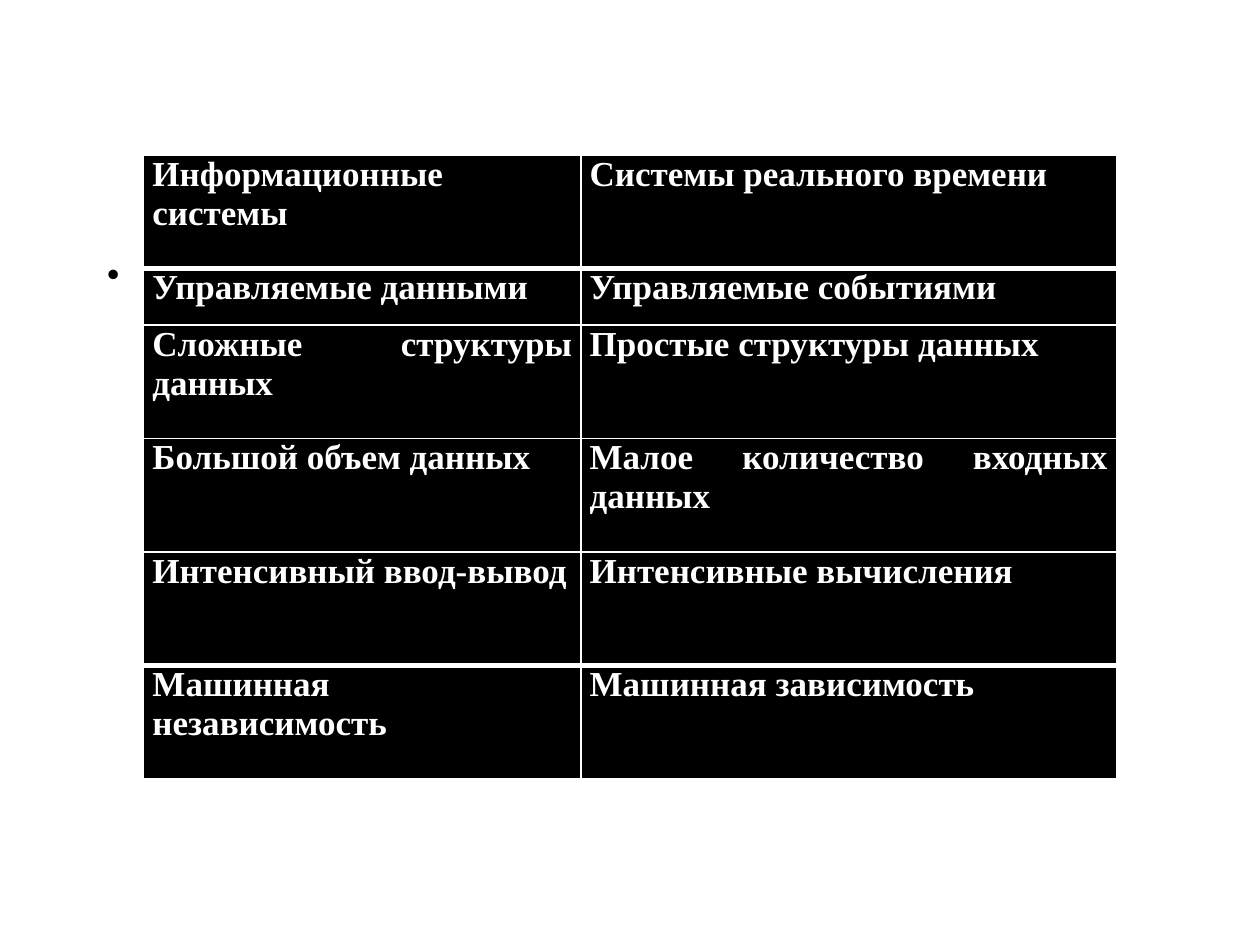
from lxml import etree
from pptx import Presentation
from pptx.dml.color import RGBColor
from pptx.enum import text
from pptx.oxml import ns
from pptx.util import Inches, Pt

BLACK = RGBColor(0, 0, 0)
WHITE = RGBColor(255, 255, 255)
FONT = "Times New Roman"

COLUMN_WIDTHS = (3.47, 4.25)
ROW_HEIGHTS = (0.9, 0.45, 0.9, 0.9, 0.9, 0.9)
ROWS = (
    ("Информационные системы", "Системы реального времени"),
    ("Управляемые данными", "Управляемые событиями"),
    ("Сложные структуры данных", "Простые структуры данных"),
    ("Большой объем данных", "Малое количество входных данных"),
    ("Интенсивный ввод-вывод", "Интенсивные вычисления"),
    ("Машинная независимость", "Машинная зависимость"),
)


def format_paragraph(p, color):
    p.alignment = text.PP_ALIGN.JUSTIFY
    p.font.name = FONT
    p.font.size = Pt(20)
    p.font.bold = True
    p.font.color.rgb = color


def add_borders(cell, top, bottom):
    """Draw white borders; top and bottom are widths in points."""
    tcPr = cell._tc.get_or_add_tcPr()
    for side, width in (("L", 1), ("R", 1), ("T", top), ("B", bottom)):
        ln = etree.SubElement(tcPr, ns.qn(f"a:ln{side}"), w=str(Pt(width)))
        fill = etree.SubElement(ln, ns.qn("a:solidFill"))
        etree.SubElement(fill, ns.qn("a:srgbClr"), val=str(WHITE))


def fill_cell(cell, label, top, bottom):
    cell.text = label
    cell.margin_left = cell.margin_right = Inches(0.07)
    cell.margin_top = cell.margin_bottom = 0
    format_paragraph(cell.text_frame.paragraphs[0], WHITE)
    add_borders(cell, top, bottom)
    cell.fill.solid()
    cell.fill.fore_color.rgb = BLACK


def add_comparison_table(s):
    table = s.shapes.add_table(
        len(ROWS), len(COLUMN_WIDTHS), Inches(1.14), Inches(1.23),
        Inches(sum(COLUMN_WIDTHS)), Inches(sum(ROW_HEIGHTS))).table
    for column, width in zip(table.columns, COLUMN_WIDTHS):
        column.width = Inches(width)
    for row, height in zip(table.rows, ROW_HEIGHTS):
        row.height = Inches(height)

    # Heavy rules lie below the first row and above the last one.
    last = len(ROWS) - 1
    rules = [3 if i in (1, last) else 1 for i in range(len(ROWS) + 1)]
    for i, labels in enumerate(ROWS):
        for j, label in enumerate(labels):
            fill_cell(table.cell(i, j), label, rules[i], rules[i + 1])


def set_subtitle(sp):
    sp.left, sp.top = Inches(0.75), Inches(1.78)
    sp.width, sp.height = Inches(8.43), Inches(5.04)
    tf = sp.text_frame
    tf.text = "•"
    p = tf.paragraphs[0]
    p.line_spacing = 1.5
    p.space_before = Pt(0)
    format_paragraph(p, BLACK)


def main():
    prs = Presentation()
    prs.slide_width, prs.slide_height = Inches(10), Inches(7.5)
    s = prs.slides.add_slide(prs.slide_layouts[0])
    title = s.shapes.title.element
    title.getparent().remove(title)
    set_subtitle(s.placeholders[1])
    add_comparison_table(s)
    prs.save("out.pptx")


if __name__ == "__main__":
    main()
